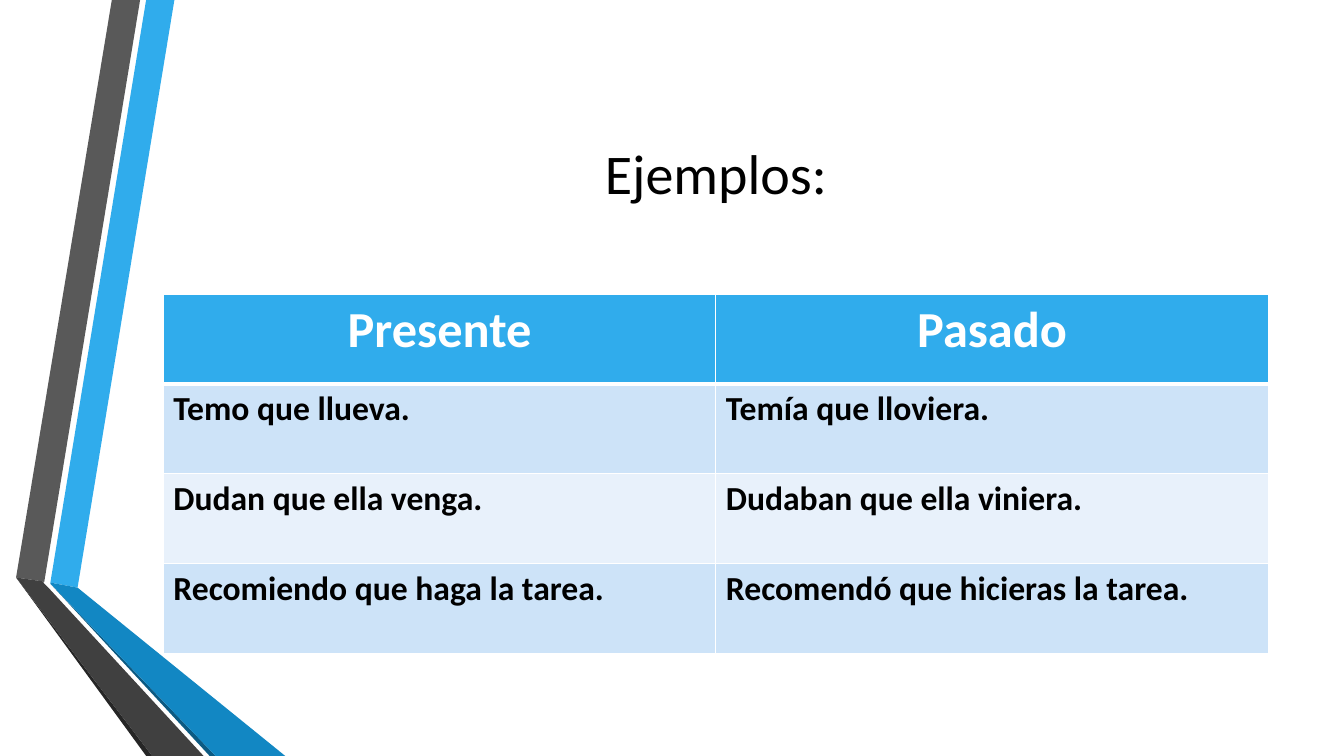
import dataclasses

import lxml.etree
import pptx
import pptx.dml.color
import pptx.enum.text
import pptx.oxml.ns
import pptx.util

SCALE = 9144


@dataclasses.dataclass(frozen=True)
class Theme:
    font: str = "Calibri"
    title_size: int = 40
    header_size: int = 36
    body_size: int = 24
    black: str = "000000"
    white: str = "FFFFFF"
    blue: str = "30ACEC"
    blue_mid: str = "1287C3"
    blue_dark: str = "0C5A82"
    gray: str = "595959"
    gray_mid: str = "404040"
    gray_dark: str = "262626"
    bands: tuple = ("CDE3F8", "E8F1FB")


def px(length):
    return pptx.util.Emu(length * SCALE)


def rgb(value):
    return pptx.dml.color.RGBColor.from_string(value)


def write_text(frame, text, *, font, size, color, bold=False, align="LEFT"):
    para = frame.paragraphs[0]
    para.alignment = getattr(pptx.enum.text.PP_ALIGN, align)
    span = para.add_run()
    span.text = text
    span.font.name = font
    span.font.size = pptx.util.Pt(size)
    span.font.bold = bold
    span.font.color.rgb = rgb(color)


class SlideBuilder:
    def __init__(self, page, theme):
        self.page = page
        self.theme = theme

    def ribbon(self, points, color):
        corners = [(px(x), px(y)) for x, y in points]
        outline = self.page.shapes.build_freeform(*corners[0], scale=1.0)
        outline.add_line_segments(corners[1:], close=True)
        shape = outline.convert_to_shape()
        shape.shadow.inherit = False
        shape.fill.solid()
        shape.fill.fore_color.rgb = rgb(color)
        shape.line.fill.background()

    def title(self, text, left, top, width, height):
        box = self.page.shapes.title
        box.left, box.top, box.width, box.height = map(px, (left, top, width, height))
        box.text_frame.vertical_anchor = pptx.enum.text.MSO_ANCHOR.MIDDLE
        write_text(box.text_frame, text, font=self.theme.font,
                   size=self.theme.title_size, color=self.theme.black, align="CENTER")

    def borders(self, cell, **widths):
        properties = cell._tc.get_or_add_tcPr()
        for side in "LRTB":
            line = lxml.etree.SubElement(
                properties, pptx.oxml.ns.qn(f"a:ln{side}"),
                w=str(pptx.util.Pt(widths.get(side, 1))))
            fill = lxml.etree.SubElement(line, pptx.oxml.ns.qn("a:solidFill"))
            lxml.etree.SubElement(fill, pptx.oxml.ns.qn("a:srgbClr"), val=self.theme.white)

    def table(self, rows, left, top, width, row_height):
        theme = self.theme
        columns = len(rows[0])
        table = self.page.shapes.add_table(
            len(rows), columns, px(left), px(top), px(width),
            px(row_height * len(rows))).table
        for column in table.columns:
            column.width = px(width // columns)
        for index, texts in enumerate(rows):
            table.rows[index].height = px(row_height)
            header = index == 0
            for cell, text in zip(table.rows[index].cells, texts):
                self.borders(cell, T=3 if index == 1 else 1, B=3 if header else 1)
                cell.fill.solid()
                cell.fill.fore_color.rgb = rgb(
                    theme.blue if header else theme.bands[(index - 1) % 2])
                write_text(cell.text_frame, text, font=theme.font, bold=True,
                           size=theme.header_size if header else theme.body_size,
                           color=theme.white if header else theme.black,
                           align="CENTER" if header else "LEFT")


def main():
    theme = Theme()
    deck = pptx.Presentation()
    deck.slide_width, deck.slide_height = px(1333), px(750)
    slide = SlideBuilder(deck.slides.add_slide(deck.slide_layouts[5]), theme)

    ribbons = [
        (theme.blue, [(50, 578), (77, 583), (173, 0), (145, 0)]),
        (theme.gray, [(139, 0), (111, 0), (16, 573), (44, 577)]),
        (theme.gray_dark, [(16, 573), (145, 750), (151, 750)]),
        (theme.blue_dark, [(50, 579), (208, 750), (214, 750)]),
        (theme.blue_mid, [(50, 578), (50, 579), (214, 750), (283, 750), (77, 583)]),
        (theme.gray_mid, [(202, 750), (48, 583), (43, 578), (44, 577),
                          (16, 573), (151, 750)]),
    ]
    for color, points in ribbons:
        slide.ribbon(points, color)

    slide.title("Ejemplos:", 162, 75, 1096, 192)
    slide.table([
        ("Presente", "Pasado"),
        ("Temo que llueva.", "Temía que lloviera."),
        ("Dudan que ella venga.", "Dudaban que ella viniera."),
        ("Recomiendo que haga la tarea.", "Recomendó que hicieras la tarea."),
    ], 162, 292, 1096, 89)
    deck.save("out.pptx")


if __name__ == "__main__":
    main()
